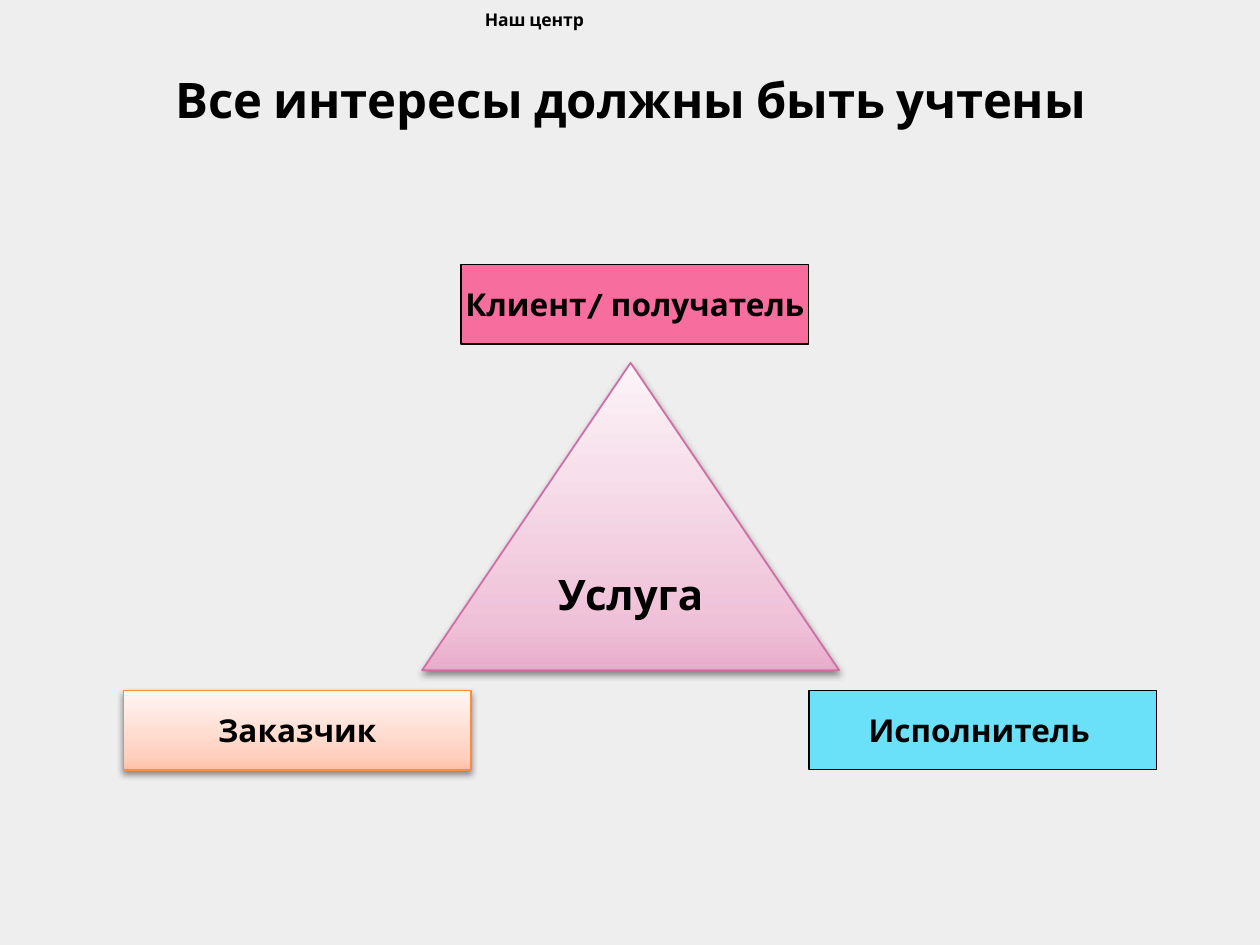
from lxml.etree import SubElement
from pptx import Presentation
from pptx.dml.color import RGBColor
from pptx.enum.shapes import MSO_SHAPE
from pptx.enum.text import MSO_ANCHOR, PP_ALIGN
from pptx.oxml.ns import qn
from pptx.util import Inches, Pt

FONT = "Cabin"
COLORS = {
    "background": "EEEEEE",
    "black": "000000",
    "pink": "F76D9E",
    "cyan": "6BE1F9",
    "mauve": "CF6DA4",
    "orange": "FA8D3D",
}
GRADIENTS = {
    "mauve": [(0, "E9ABCA"), (15, "EFC1D8"), (100, "FCF4F8")],
    "orange": [(0, "FFBEA3"), (15, "FFCFBD"), (100, "FFF6F4")],
}
TITLE = "Все интересы должны быть учтены"
HEADER = "Наш центр"
SERVICE = ("Услуга", 3.35, 2.88, "mauve")
PARTIES = [
    ("Заказчик", 0.98, 5.48, "orange"),
    ("Клиент/ получатель", 3.66, 2.1, "pink"),
    ("Исполнитель ", 6.42, 5.48, "cyan"),
]
TRIANGLE_SIZE = (3.31, 2.44)
PARTY_SIZE = (2.76, 0.63)


def color(name):
    return RGBColor.from_string(COLORS[name])


def place(shape, left, top, width, height):
    shape.left, shape.top = Inches(left), Inches(top)
    shape.width, shape.height = Inches(width), Inches(height)


def write(shape, text, size, align, anchor, wrap=True):
    frame = shape.text_frame
    frame.word_wrap = wrap
    frame.vertical_anchor = anchor
    para = frame.paragraphs[0]
    para.alignment = align
    span = para.add_run()
    span.text = text
    span.font.name = FONT
    span.font.size = Pt(size)
    span.font.bold = True
    span.font.color.rgb = color("black")


def add_gradient(shape, stops):
    shape.fill.gradient()
    shape.fill.gradient_angle = 90
    stop_list = shape._element.spPr.find(qn("a:gradFill")).find(qn("a:gsLst"))
    for stop in list(stop_list):
        stop_list.remove(stop)
    for position, value in stops:
        stop = SubElement(stop_list, qn("a:gs"), pos=str(position * 1000))
        SubElement(stop, qn("a:srgbClr"), val=value)


def add_shadow(shape):
    effects = shape._element.spPr.find(qn("a:effectLst"))
    shadow = SubElement(
        effects, qn("a:outerShdw"), blurRad=str(Pt(4)), dist=str(Pt(2)),
        dir="5400000", rotWithShape="0",
    )
    tint = SubElement(shadow, qn("a:srgbClr"), val=COLORS["black"])
    SubElement(tint, qn("a:alpha"), val="43000")


def add_block(slide, kind, item, size, text_size):
    text, left, top, hue = item
    shape = slide.shapes.add_shape(kind, *map(Inches, (left, top, *size)))
    shape.shadow.inherit = False
    if hue in GRADIENTS:
        add_gradient(shape, GRADIENTS[hue])
        shape.line.color.rgb = color(hue)
        shape.line.width = Pt(1)
        add_shadow(shape)
    else:
        shape.fill.solid()
        shape.fill.fore_color.rgb = color(hue)
        shape.line.color.rgb = color("black")
        shape.line.width = Pt(0.75)
    write(shape, text, text_size, PP_ALIGN.CENTER, MSO_ANCHOR.MIDDLE, wrap=False)


def main():
    deck = Presentation()
    deck.slide_width, deck.slide_height = Inches(10), Inches(7.5)
    page = deck.slides.add_slide(deck.slide_layouts[5])
    page.background.fill.solid()
    page.background.fill.fore_color.rgb = color("background")

    title = page.shapes.title
    place(title, 0.63, 0.33, 8.75, 0.74)
    write(title, TITLE, 28, PP_ALIGN.CENTER, MSO_ANCHOR.BOTTOM)

    add_block(page, MSO_SHAPE.ISOSCELES_TRIANGLE, SERVICE, TRIANGLE_SIZE, 24)
    for party in PARTIES:
        add_block(page, MSO_SHAPE.RECTANGLE, party, PARTY_SIZE, 18)

    header = page.shapes.add_textbox(*map(Inches, (3.75, 0.02, 4.5, 0.36)))
    write(header, HEADER, 10, PP_ALIGN.LEFT, MSO_ANCHOR.TOP)

    deck.save("out.pptx")


if __name__ == "__main__":
    main()
